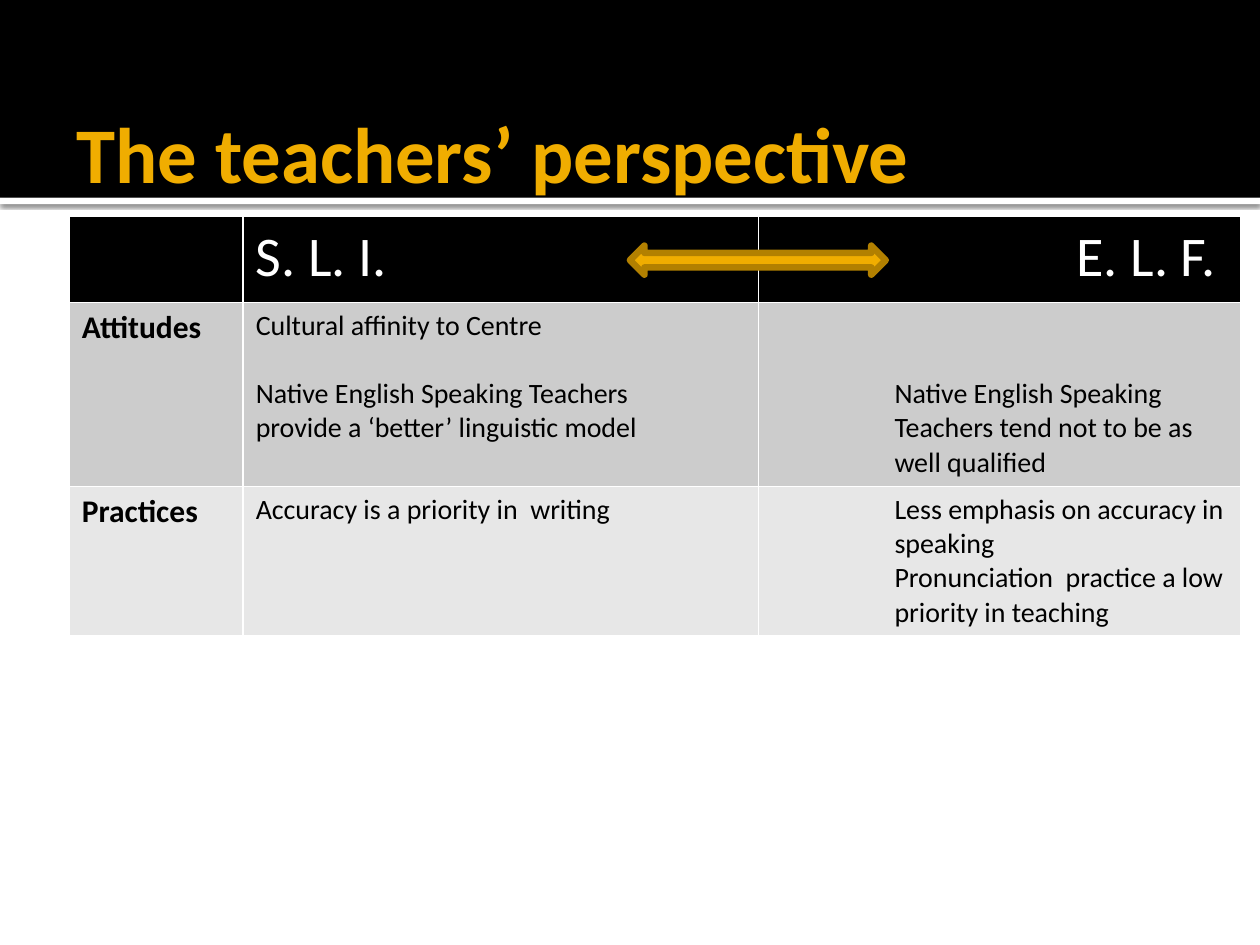
from lxml import etree
from pptx import Presentation
from pptx import util as u
from pptx.dml.color import RGBColor
from pptx.enum import shapes, text
from pptx.oxml import parse_xml
from pptx.oxml.ns import qn

NS = 'xmlns:a="http://schemas.openxmlformats.org/drawingml/2006/main"'
FONT = "Calibri"
BLACK, WHITE, GOLD, BROWN = "000000", "FFFFFF", "F0AD00", "B28000"
LINE_HEIGHT = 19.5  # points taken by one 16 pt line
HEADER = dict(size=u.Pt(32), bold=False, color=WHITE)
LABEL = dict(size=u.Pt(18), bold=True, color=BLACK)
BODY = dict(size=u.Pt(16), bold=False, color=BLACK)
FAR = dict(indent=0.98)

# Each cell: paragraphs, font format, layout options
ROWS = [
    (BLACK, [([], HEADER, {}),
             (["S. L. I."], HEADER, {}),
             (["E. L. F. "], HEADER, dict(align=text.PP_ALIGN.RIGHT))]),
    ("CCCCCC", [(["Attitudes"], LABEL, {}),
                (["Cultural affinity to Centre",
                  "Native English Speaking Teachers",
                  "provide a ‘better’ linguistic model"], BODY, dict(gap_at=1)),
                (["Native English Speaking Teachers tend not to be as "
                  "well qualified"], BODY, dict(FAR, lines_above=2))]),
    ("E7E7E7", [(["Practices"], LABEL, {}),
                (["Accuracy is a priority in  writing"], BODY, {}),
                (["Less emphasis on accuracy in speaking",
                  "Pronunciation  practice a low priority in teaching"],
                 BODY, FAR)]),
]


def rgb(value):
    return RGBColor.from_string(value)


def paint(target, color):
    target.fill.solid()
    target.fill.fore_color.rgb = rgb(color)


def format_font(font, color, **values):
    font.name = FONT
    font.color.rgb = rgb(color)
    for name, value in values.items():
        setattr(font, name, value)


def add_shape(s, kind, box, fill, line=None, width=0):
    sp = s.shapes.add_shape(kind, *map(u.Inches, box))
    sp.shadow.inherit = False
    paint(sp, fill)
    if line:
        sp.line.color.rgb = rgb(line)
        sp.line.width = u.Pt(width)
    else:
        sp.line.fill.background()
    return sp


def add_soft_shadow(sp):
    effects = sp._element.spPr.find(qn("a:effectLst"))
    effects.append(parse_xml(
        f'<a:outerShdw {NS} blurRad="{u.Pt(2.5)}" dist="{u.Pt(0.8)}" '
        'dir="5400000" rotWithShape="0"><a:srgbClr val="000000">'
        '<a:alpha val="60000"/></a:srgbClr></a:outerShdw>'))


def add_band(s):
    """Draw the title background and its white edge behind the title."""
    rect = shapes.MSO_SHAPE.RECTANGLE
    edge = add_shape(s, rect, (0, 1.57, 10, 0.05), WHITE)
    add_soft_shadow(edge)
    band = add_shape(s, rect, (0, 0, 10, 1.57), BLACK)
    for i, sp in enumerate((edge, band)):
        s.shapes._spTree.insert(2 + i, sp._element)


def set_title(s, words):
    sp = s.shapes.title
    sp.left, sp.top, sp.width, sp.height = map(u.Inches, (0.51, 0.52, 9, 1.37))
    tf = sp.text_frame
    frame = dict(word_wrap=True, vertical_anchor=text.MSO_ANCHOR.MIDDLE,
                 auto_size=text.MSO_AUTO_SIZE.NONE,
                 margin_left=u.Inches(0.1), margin_right=u.Inches(0.05),
                 margin_top=u.Inches(0.05), margin_bottom=u.Inches(0.05))
    for name, value in frame.items():
        setattr(tf, name, value)
    p = tf.paragraphs[0]
    p.alignment = text.PP_ALIGN.LEFT
    r = p.add_run()
    r.text = words
    format_font(r.font, GOLD, size=u.Pt(45), bold=True)


def set_borders(cell, color, width):
    tcPr = cell._tc.get_or_add_tcPr()
    for i, side in enumerate("LRTB"):
        ln = etree.fromstring(
            f'<a:ln{side} {NS} w="{u.Pt(width)}"><a:solidFill>'
            f'<a:srgbClr val="{color}"/></a:solidFill></a:ln{side}>')
        tcPr.insert(i, ln)


def fill_cell(cell, lines, font, align=None, indent=0, gap_at=None, lines_above=0):
    """Write lines; gap_at is the paragraph that follows a one-line gap."""
    tf = cell.text_frame
    cell.margin_top = u.Inches(0.05) + u.Pt(LINE_HEIGHT * lines_above)
    for i, line in enumerate(lines):
        p = tf.add_paragraph() if i else tf.paragraphs[0]
        p.alignment = align
        if indent:
            p._p.get_or_add_pPr().set("marL", str(u.Inches(indent)))
        if i == gap_at:
            p.space_before = u.Pt(LINE_HEIGHT)
        r = p.add_run()
        r.text = line
        format_font(r.font, **font)


def add_comparison(s):
    widths, heights = (1.38, 4.09, 3.83), (0.68, 1.46, 1.18)
    box = (0.55, 1.72, sum(widths), sum(heights))
    table = s.shapes.add_table(len(heights), len(widths), *map(u.Inches, box)).table
    for column, width in zip(table.columns, widths):
        column.width = u.Inches(width)
    for row, height, (fill, cells) in zip(table.rows, heights, ROWS):
        row.height = u.Inches(height)
        for cell, (lines, font, options) in zip(row.cells, cells):
            paint(cell, fill)
            set_borders(cell, WHITE, 1)
            fill_cell(cell, lines, font, **options)


def main():
    prs = Presentation()
    prs.slide_width, prs.slide_height = u.Inches(10), u.Inches(7.5)
    s = prs.slides.add_slide(prs.slide_layouts[5])
    paint(s.background, WHITE)
    add_band(s)
    set_title(s, "The teachers’ perspective")
    add_comparison(s)
    add_shape(s, shapes.MSO_SHAPE.LEFT_RIGHT_ARROW, (5, 1.95, 2.03, 0.23),
              GOLD, BROWN, 3.78)
    prs.save("out.pptx")


if __name__ == "__main__":
    main()
